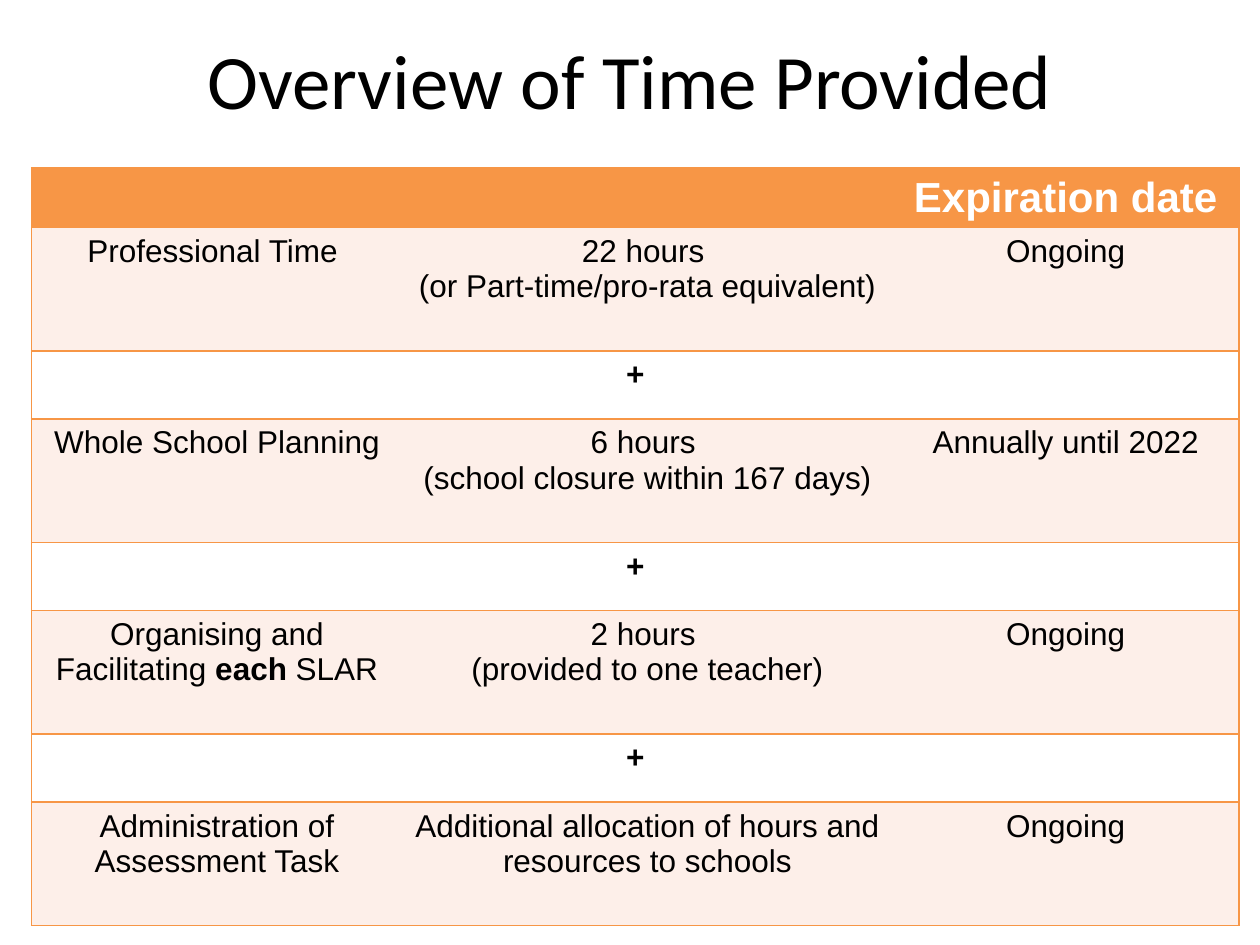
from dataclasses import dataclass

from lxml.etree import SubElement
from pptx import Presentation
from pptx.dml.color import RGBColor
from pptx.enum.text import MSO_ANCHOR, PP_ALIGN
from pptx.oxml.ns import qn
from pptx.util import Pt


@dataclass(frozen=True)
class Theme:
    accent: str = "F79646"
    tint: str = "FDEFE9"
    white: str = "FFFFFF"
    black: str = "000000"
    title_font: str = "Calibri"
    body_font: str = "Arial"
    title_size: int = 44
    header_size: int = 24
    body_size: int = 18
    border: int = 1


THEME = Theme()
NO_STYLE = "{2D5ABB26-0587-4C30-8999-92F81FD0307C}"
TITLE_BOX = (36, 0, 648, 90)
TABLE_BOX = (18, 96, 690, 430)
COLUMN_WIDTHS = (212, 280, 198)
HEADER_HEIGHT, ENTRY_HEIGHT, PLUS_HEIGHT = 32, 70.5, 39

HEADER = ("", "", "Expiration date")
# Asterisks enclose bold words; a line break starts a new paragraph.
ENTRIES = (
    ("Professional Time ", "22 hours \n(or Part-time/pro-rata equivalent)", "Ongoing"),
    ("Whole School Planning", "6 hours \n(school closure within 167 days)",
     "Annually until 2022"),
    ("Organising and Facilitating *each* SLAR",
     "2 hours \n(provided to one teacher)", "Ongoing"),
    ("Administration of Assessment Task",
     "Additional allocation of hours and resources to schools", "Ongoing"),
)


def format_paragraph(paragraph, font_name, size, color):
    paragraph.alignment = PP_ALIGN.CENTER
    paragraph.font.name = font_name
    paragraph.font.size = Pt(size)
    paragraph.font.color.rgb = RGBColor.from_string(color)


def set_borders(cell, sides):
    """Rule the sides named by the letters L, R, T and B, in that order."""
    properties = cell._tc.get_or_add_tcPr()
    for index, side in enumerate(sides):
        line = properties.makeelement(qn(f"a:ln{side}"), {"w": str(Pt(THEME.border))})
        fill = SubElement(line, qn("a:solidFill"))
        SubElement(fill, qn("a:srgbClr"), val=THEME.accent)
        properties.insert(index, line)


def fill_cell(cell, text, fill, color=THEME.black, size=THEME.body_size, bold=False):
    cell.fill.solid()
    cell.fill.fore_color.rgb = RGBColor.from_string(fill)
    frame = cell.text_frame
    for index, line in enumerate(text.split("\n")):
        paragraph = frame.add_paragraph() if index else frame.paragraphs[0]
        format_paragraph(paragraph, THEME.body_font, size, color)
        for part, words in enumerate(line.split("*")):
            if words:
                run = paragraph.add_run()
                run.text = words
                run.font.bold = bold or part % 2 == 1


def add_title(slide, box, text):
    title = slide.shapes.title
    title.left, title.top, title.width, title.height = map(Pt, box)
    frame = title.text_frame
    frame.text = text
    frame.vertical_anchor = MSO_ANCHOR.MIDDLE
    format_paragraph(frame.paragraphs[0], THEME.title_font, THEME.title_size, THEME.black)


def add_time_table(slide, box):
    """Header, then the entries with a merged plus row between them."""
    row_count = 2 * len(ENTRIES)
    table = slide.shapes.add_table(row_count, len(HEADER), *map(Pt, box)).table
    table._tbl.tblPr.find(qn("a:tableStyleId")).text = NO_STYLE
    for column, width in zip(table.columns, COLUMN_WIDTHS):
        column.width = Pt(width)

    for index, row in enumerate(table.rows):
        is_plus = index > 0 and index % 2 == 0
        if index == 0:
            row.height = Pt(HEADER_HEIGHT)
            for cell, text in zip(row.cells, HEADER):
                fill_cell(cell, text, THEME.accent, THEME.white, THEME.header_size, True)
        elif is_plus:
            row.height = Pt(PLUS_HEIGHT)
            first, *_, last = row.cells
            first.merge(last)
            fill_cell(first, "+", THEME.white, bold=True)
        else:
            row.height = Pt(ENTRY_HEIGHT)
            for cell, text in zip(row.cells, ENTRIES[index // 2]):
                fill_cell(cell, text, THEME.tint)
        for cell, sides in zip(row.cells, ("LTB", "TB", "RTB")):
            set_borders(cell, "LRTB" if is_plus else sides)


def main():
    presentation = Presentation()
    presentation.slide_width, presentation.slide_height = Pt(720), Pt(540)
    slide = presentation.slides.add_slide(presentation.slide_layouts[5])
    add_title(slide, TITLE_BOX, "Overview of Time Provided")
    add_time_table(slide, TABLE_BOX)
    presentation.save("out.pptx")


if __name__ == "__main__":
    main()
